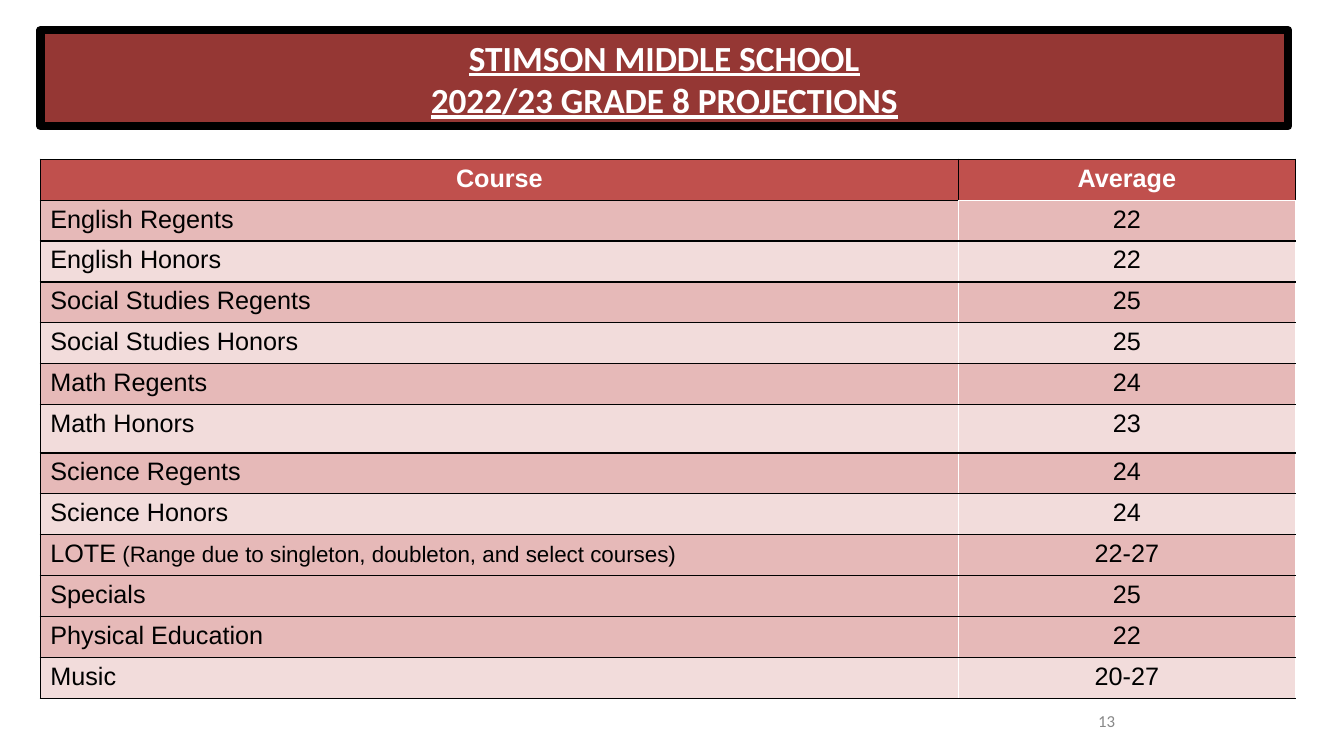
from pptx import Presentation
from pptx.dml.color import RGBColor
from pptx.enum.shapes import MSO_SHAPE as Shape
from pptx.enum.text import MSO_ANCHOR as Anchor, PP_ALIGN as Align
from pptx.oxml import parse_xml
from pptx.oxml.ns import nsdecls
from pptx.util import Pt

BLACK, WHITE = "000000", "FFFFFF"
HEADER, DARK_BAND, LIGHT_BAND = "C0504D", "E6B9B8", "F2DCDB"
NOTE = " (Range due to singleton, doubleton, and select courses)"
COURSES = [
    ("English Regents", "22", DARK_BAND),
    ("English Honors", "22", LIGHT_BAND),
    ("Social Studies Regents", "25", DARK_BAND),
    ("Social Studies Honors", "25", LIGHT_BAND),
    ("Math Regents", "24", DARK_BAND),
    ("Math Honors", "23", LIGHT_BAND),
    ("Science Regents", "24", DARK_BAND),
    ("Science Honors", "24", LIGHT_BAND),
    ("LOTE", "22-27", DARK_BAND),
    ("Specials", "25", DARK_BAND),
    ("Physical Education", "22", DARK_BAND),
    ("Music", "20-27", LIGHT_BAND),
]


def rgb(color):
    return RGBColor.from_string(color)


def set_borders(cell, left, right, top, bottom):
    """Draw 1 pt cell edges in the given colours."""
    edges = zip("LRTB", (left, right, top, bottom))
    for position, (side, color) in enumerate(edges):
        cell._tc.get_or_add_tcPr().insert(position, parse_xml(
            f'<a:ln{side} {nsdecls("a")} w="12700"><a:solidFill>'
            f'<a:srgbClr val="{color}"/></a:solidFill></a:ln{side}>'))


presentation = Presentation()
presentation.slide_width, presentation.slide_height = Pt(960), Pt(540)
slide = presentation.slides.add_slide(presentation.slide_layouts[6])

# Title banner
banner = slide.shapes.add_shape(Shape.RECTANGLE, Pt(28.8), Pt(21.6), Pt(891.4), Pt(68.4))
banner.shadow.inherit = False
banner.fill.solid()
banner.fill.fore_color.rgb = rgb("953734")
banner.line.color.rgb = rgb(BLACK)
banner.line.width = Pt(6)
banner.text_frame.vertical_anchor = Anchor.MIDDLE
paragraph = banner.text_frame.paragraphs[0]
paragraph.text = "STIMSON MIDDLE SCHOOL\v2022/23 GRADE 8 PROJECTIONS"
paragraph.alignment = Align.CENTER
font = paragraph.font
font.name, font.size, font.bold, font.underline = "Calibri", Pt(25.2), True, True
font.color.rgb = rgb(WHITE)

# Projections table
rows = [("Course", "Average", HEADER)] + COURSES
table = slide.shapes.add_table(len(rows), 2, Pt(28.8), Pt(113.8), Pt(896.4), Pt(384.5)).table
table.columns[0].width, table.columns[1].width = Pt(655.9), Pt(240.5)
for row_index, (course, average, band) in enumerate(rows):
    is_header = row_index == 0
    table.rows[row_index].height = Pt(34.6 if course == "Math Honors" else 29.2)
    for column_index, text in enumerate((course, average)):
        is_average = column_index == 1
        cell = table.cell(row_index, column_index)
        cell.fill.solid()
        cell.fill.fore_color.rgb = rgb(band)
        set_borders(
            cell,
            left=WHITE if is_average and not is_header else BLACK,
            right=BLACK if is_header else WHITE,
            top=WHITE if is_average and row_index == 1 else BLACK,
            bottom=WHITE if is_average and is_header else BLACK)
        paragraph = cell.text_frame.paragraphs[0]
        paragraph.text = text
        paragraph.alignment = Align.CENTER if is_header or is_average else Align.LEFT
        font = paragraph.font
        font.name, font.size, font.bold = "Arial", Pt(18), is_header
        font.color.rgb = rgb(WHITE if is_header else BLACK)
        if text == "LOTE":
            note = paragraph.add_run()
            note.text = NOTE
            note.font.size = Pt(16)

# Slide number
number = slide.shapes.add_textbox(Pt(635.8), Pt(500.4), Pt(167.8), Pt(28.8))
number.text_frame.word_wrap = True
number.text_frame.vertical_anchor = Anchor.MIDDLE
paragraph = number.text_frame.paragraphs[0]
paragraph.text = "13"
paragraph.alignment = Align.RIGHT
paragraph.font.name, paragraph.font.size = "Calibri", Pt(12)
paragraph.font.color.rgb = rgb("888888")

presentation.save("out.pptx")
